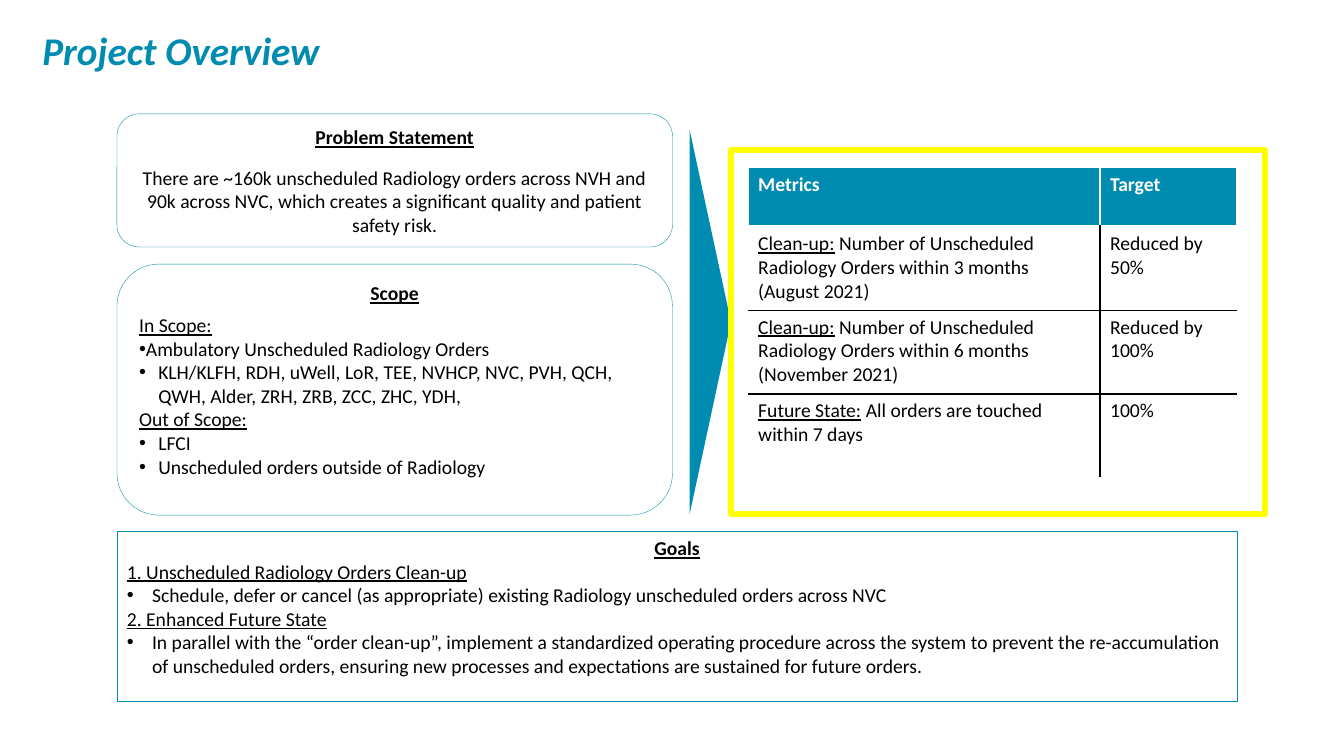
from dataclasses import dataclass

from lxml.etree import SubElement
from pptx import Presentation
from pptx.dml.color import RGBColor
from pptx.enum.shapes import MSO_SHAPE as Shape
from pptx.enum.text import MSO_ANCHOR as Anchor, MSO_AUTO_SIZE as AutoSize, PP_ALIGN as Align
from pptx.oxml.ns import qn
from pptx.util import Inches, Pt


@dataclass(frozen=True)
class Theme:
    font: str = "Calibri"
    title_size: float = 28
    body_size: float = 14
    teal: str = "008BB0"
    yellow: str = "FFFF00"
    black: str = "000000"
    white: str = "FFFFFF"
    thin: float = 0.25
    thick: float = 4.5


THEME = Theme()
HEADING = {"bold": True, "underline": True}
UNDERLINED = {"underline": True}
CENTERED = {"alignment": Align.CENTER}

# Each paragraph: runs of (text, font format), paragraph format, (margin, indent) of a bullet
PROBLEM = [
    ([("Problem Statement", HEADING)], {**CENTERED, "space_after": Pt(6)}, None),
    ([("There are ~160k unscheduled Radiology orders across NVH and 90k across NVC, "
       "which creates a significant quality and patient safety risk.", {})],
     {**CENTERED, "space_before": Pt(6), "space_after": Pt(6)}, None),
]
SCOPE = [
    ([("Scope", HEADING)], {**CENTERED, "space_after": Pt(6)}, None),
    ([("In Scope:", UNDERLINED)], {}, None),
    ([("Ambulatory Unscheduled Radiology Orders", {})], {}, (0, -0.19)),
    ([("KLH/KLFH, RDH, uWell, LoR, TEE, NVHCP, NVC, PVH, QCH, QWH, Alder, "
       "ZRH, ZRB, ZCC, ZHC, YDH,", {})], {}, (0.19, -0.19)),
    ([("Out of Scope:", UNDERLINED)], {}, None),
    ([("LFCI", {})], {}, (0.19, -0.19)),
    ([("Unscheduled orders outside of Radiology", {})], {}, (0.19, -0.19)),
]
GOALS = [
    ([("Goals", HEADING)], CENTERED, None),
    ([("1. Unscheduled Radiology Orders Clean-up", UNDERLINED)], {}, None),
    ([("Schedule, defer or cancel (as appropriate) existing Radiology unscheduled "
       "orders across NVC", {})], {}, (0.25, -0.25)),
    ([("2. Enhanced Future State", UNDERLINED)], {}, None),
    ([("In parallel with the “order clean-up”, implement a standardized operating "
       "procedure across the system to prevent the re-accumulation of unscheduled orders, "
       "ensuring new processes and expectations are sustained for future orders.", {})],
     {}, (0.25, -0.25)),
]
METRICS = [
    ("Clean-up:", " Number of Unscheduled Radiology Orders within 3 months (August 2021)",
     "Reduced by 50%"),
    ("Clean-up:", " Number of Unscheduled Radiology Orders within 6 months (November 2021)",
     "Reduced by 100%"),
    ("Future State:", " All orders are touched within 7 days", "100%"),
]


def set_all(target, values):
    for name, value in values.items():
        setattr(target, name, value)


def add_run(paragraph, text, color=THEME.black, size=THEME.body_size, **style):
    run = paragraph.add_run()
    run.text = text
    set_all(run.font, {"name": THEME.font, "size": Pt(size), "bold": False, **style})
    run.font.color.rgb = RGBColor.from_string(color)


def add_bullet(paragraph, margin, indent):
    properties = paragraph._p.get_or_add_pPr()
    properties.set("marL", str(Inches(margin)))
    properties.set("indent", str(Inches(indent)))
    SubElement(properties, qn("a:buFont"), typeface="Arial")
    SubElement(properties, qn("a:buChar"), char="•")


def add_outline(slide, kind, box, color, width):
    shape = slide.shapes.add_shape(kind, *map(Inches, box))
    shape.shadow.inherit = False
    shape.fill.background()
    shape.line.color.rgb = RGBColor.from_string(color)
    shape.line.width = Pt(width)
    return shape


def add_title(slide, box):
    title = slide.shapes.title
    left, top, width, height = map(Inches, box)
    set_all(title, {"left": left, "top": top, "width": width, "height": height})
    frame = title.text_frame
    set_all(frame, {"vertical_anchor": Anchor.MIDDLE, "word_wrap": True,
                    "auto_size": AutoSize.NONE})
    paragraph = frame.paragraphs[0]
    paragraph.alignment = Align.LEFT
    add_run(paragraph, "Project Overview", THEME.teal, THEME.title_size,
            bold=True, italic=True)


def add_panel(slide, kind, box, paragraphs):
    frame = add_outline(slide, kind, box, THEME.teal, THEME.thin).text_frame
    set_all(frame, {"word_wrap": True, "vertical_anchor": Anchor.TOP})
    for index, (runs, layout, bullet) in enumerate(paragraphs):
        paragraph = frame.add_paragraph() if index else frame.paragraphs[0]
        if bullet:
            add_bullet(paragraph, *bullet)
        set_all(paragraph, {"alignment": Align.LEFT, **layout})
        for text, style in runs:
            add_run(paragraph, text, **style)


def add_arrow(slide, box):
    # Triangle turned to point right, filling the upright box
    left, top, width, height = box
    shift = (height - width) / 2
    arrow = slide.shapes.add_shape(
        Shape.ISOSCELES_TRIANGLE,
        *map(Inches, (left - shift, top + shift, height, width)))
    arrow.rotation = 90
    arrow.shadow.inherit = False
    arrow.fill.solid()
    arrow.fill.fore_color.rgb = RGBColor.from_string(THEME.teal)
    arrow.line.fill.background()


def add_border(cell, side, color, width=1):
    line = SubElement(cell._tc.get_or_add_tcPr(), qn(f"a:ln{side}"), w=str(Pt(width)))
    fill = SubElement(line, qn("a:solidFill"))
    SubElement(fill, qn("a:srgbClr"), val=color)


def add_metrics(slide, box):
    # Table inside a highlighted frame
    left, top = box[0] + 0.17, box[1] + 0.17
    widths, heights = (3.49, 1.35), (0.59, 0.83, 0.83, 0.83)
    table = slide.shapes.add_table(
        len(heights), len(widths),
        *map(Inches, (left, top, sum(widths), sum(heights)))).table
    set_all(table, {"first_row": False, "horz_banding": False})
    for column, width in zip(table.columns, widths):
        column.width = Inches(width)
    for row, height in zip(table.rows, heights):
        row.height = Inches(height)

    header = {"color": THEME.white, "bold": True}
    rows = [([("Metrics", header)], [("Target", header)])]
    rows += [([(label, UNDERLINED), (text, {})], [(target, {})])
             for label, text, target in METRICS]
    last = len(rows) - 1
    for r, row in enumerate(rows):
        for c, runs in enumerate(row):
            cell = table.cell(r, c)
            for text, style in runs:
                add_run(cell.text_frame.paragraphs[0], text, **style)
            # Black lines only between body cells
            inner = {"L": r and c, "R": r and not c, "T": r > 1, "B": 0 < r < last}
            for side, is_inner in inner.items():
                add_border(cell, side, THEME.black if is_inner else THEME.white,
                           3 if side == "B" and r == 0 else 1)
            if r:
                cell.fill.background()
            else:
                cell.fill.solid()
                cell.fill.fore_color.rgb = RGBColor.from_string(THEME.teal)
    add_outline(slide, Shape.RECTANGLE, box, THEME.yellow, THEME.thick)


def main():
    presentation = Presentation()
    presentation.slide_width, presentation.slide_height = Inches(13.33), Inches(7.5)
    slide = presentation.slides.add_slide(presentation.slide_layouts[5])

    add_title(slide, (0.32, 0.13, 10.15, 0.72))
    add_panel(slide, Shape.ROUNDED_RECTANGLE, (1.16, 1.13, 5.51, 1.32), PROBLEM)
    add_arrow(slide, (6.84, 1.29, 0.41, 3.81))
    add_panel(slide, Shape.ROUNDED_RECTANGLE, (1.16, 2.62, 5.51, 2.49), SCOPE)
    add_metrics(slide, (7.25, 1.49, 5.3, 3.61))
    add_panel(slide, Shape.RECTANGLE, (1.16, 5.27, 11.11, 1.69), GOALS)
    presentation.save("out.pptx")


if __name__ == "__main__":
    main()
